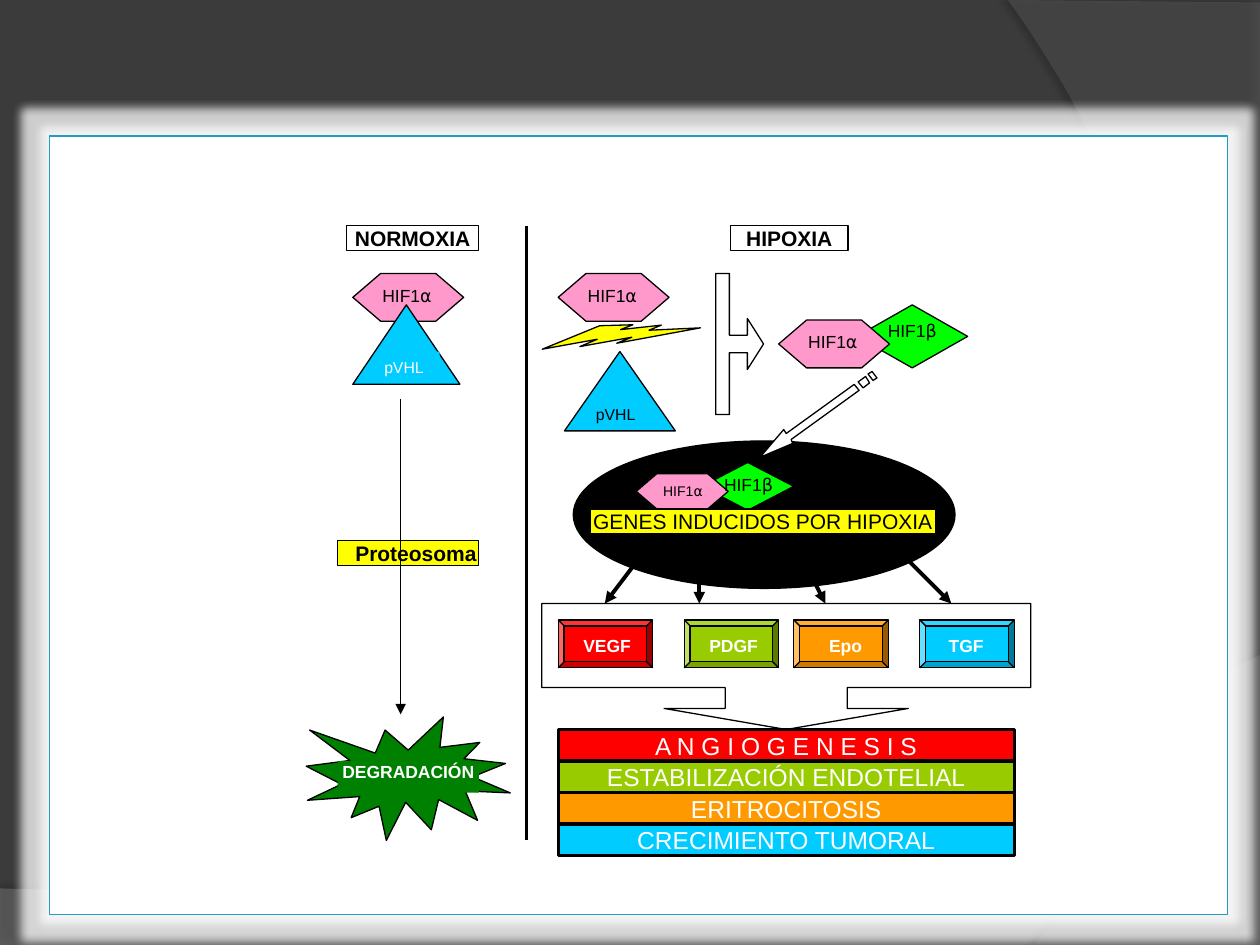
from lxml.etree import SubElement as Sub
from pptx import Presentation
from pptx.dml.color import RGBColor
from pptx.enum.shapes import MSO_CONNECTOR as Link, MSO_SHAPE as Form
from pptx.enum.text import MSO_ANCHOR as Anchor, PP_ALIGN as Align
from pptx.oxml import parse_xml as read
from pptx.oxml.ns import nsdecls, qn
from pptx.util import Cm, Pt

rgb = RGBColor.from_string
INCH = Cm(2.54)  # the layout grid is in eighths of an inch
BLACK, WHITE, YELLOW = "000000", "FFFFFF", "FFFF00"
PINK, BLUE, LIME, GREEN = "FF99CC", "00CCFF", "00FF00", "008000"
RED, OLIVE, AMBER = "FF0000", "99CC00", "FF9900"
HEX = [0.583]

deck = Presentation()
deck.slide_width, deck.slide_height = Cm(25.4), Cm(19.05)
slide = deck.slides.add_slide(deck.slide_layouts[6])
back = slide.background.fill
back.solid()
back.fore_color.rgb = rgb("3B3B3B")
shapes = slide.shapes


def put(form, box, fill=None, line=None, text="", size=10, color=BLACK, bold=False,
        align=Align.CENTER, pad=(0, 0, 0, 0), wrap=True, adj=(), width=0.75):
    """Add a shape, or a text box when form is None."""
    box = [int(v * INCH) for v in box]
    if form is None:
        shape = shapes.add_textbox(*box)
    else:
        shape = shapes.add_shape(form, *box)
        shape.shadow.inherit = False
        for i, v in enumerate(adj):
            shape.adjustments[i] = v
    if fill:
        shape.fill.solid()
        shape.fill.fore_color.rgb = rgb(fill)
    if line:
        shape.line.color.rgb = rgb(line)
        shape.line.width = Pt(width)
    else:
        shape.line.fill.background()
    if not text:
        return shape
    frame = shape.text_frame
    left, top, right, low = [int(v * INCH) for v in pad]
    form = {"margin_left": left, "margin_top": top, "margin_right": right,
            "margin_bottom": low, "word_wrap": wrap, "vertical_anchor": Anchor.TOP}
    for name, value in form.items():
        setattr(frame, name, value)
    para = frame.paragraphs[0]
    para.alignment = align
    # Greek letters take their own font
    stem = text.rstrip("αβ")
    for part, face in ((stem, "Arial"), (text[len(stem):], "DejaVu Sans")):
        if part:
            run = para.add_run()
            run.text = part
            for name, value in {"size": Pt(size), "name": face, "bold": bold}.items():
                setattr(run.font, name, value)
            run.font.color.rgb = rgb(color)
    return shape


def trace(paths, fill):
    """Add an outline of one or more closed paths."""
    paths = [[(round(x * 254), round(y * 254)) for x, y in p] for p in paths]
    pen = shapes.build_freeform(*paths[0][0], scale=Cm(0.01))
    for i, path in enumerate(paths):
        if i:
            pen.move_to(*path[0])
        pen.add_line_segments(path[1:], close=True)
    shape = pen.convert_to_shape()
    shape.shadow.inherit = False
    shape.fill.solid()
    shape.fill.fore_color.rgb = rgb(fill)
    return shape


# Background waves: corners, then a curve by four control points
waves = [
    ([(0, 7.05), (0, 7.5), (10, 7.5)],
     [(10, 5.2), (5.59, 7.29), (3.91, 7.19), (0, 7.05)], "7F7F7F", 45, 35, 3.5, 270),
    ([(10, 0.02), (10, 7.5)],
     [(8.21, 7.5), (9.35, 6.19), (10.18, 3), (8, 0)], "5E5E5E", 40, 45, 4, 180),
]
for ends, curve, fill, alpha, dark, dist, turn in waves:
    bend = []
    for i in range(41):
        t = i / 40
        parts = ((1 - t) ** 3, 3 * t * (1 - t) ** 2, 3 * t * t * (1 - t), t ** 3)
        bend.append([sum(w * p[k] for w, p in zip(parts, curve)) for k in (0, 1)])
    wave = trace([ends + bend], fill)
    wave.line.fill.background()
    tint = wave._element.spPr.find(qn("a:solidFill"))[0]
    Sub(tint, qn("a:alpha")).set("val", str(alpha * 1000))
    wave._element.spPr.find(qn("a:effectLst")).append(read(
        f'<a:outerShdw {nsdecls("a")} blurRad="{Pt(4)}" dist="{Pt(dist)}" dir="{turn * 60000}">'
        f'<a:srgbClr val="{BLACK}"><a:alpha val="{dark * 1000}"/></a:srgbClr></a:outerShdw>'))

# White panel with a soft glow
panel = put(Form.RECTANGLE, (0.39, 1.08, 9.35, 6.18), WHITE, "239BC2")
panel._element.spPr.find(qn("a:effectLst")).append(read(
    f'<a:glow {nsdecls("a")} rad="{Pt(10)}"><a:srgbClr val="{WHITE}">'
    '<a:alpha val="75000"/></a:srgbClr></a:glow>'))

# Headings and the proteasome label
for x, w, text in ((2.75, 1.05, "NORMOXIA"), (5.8, 0.93, "HIPOXIA")):
    put(Form.RECTANGLE, (x, 1.79, w, 0.2), WHITE, BLACK, text, 12, bold=True)
put(Form.RECTANGLE, (2.68, 4.29, 1.12, 0.2), YELLOW, BLACK, "Proteosoma", 12,
    bold=True, align=Align.LEFT, pad=(0.14, 0, 0, 0), wrap=False)

# Callout, nucleus and bolt
put(Form.DOWN_ARROW_CALLOUT, (4.3, 4.79, 3.88, 1), WHITE, BLACK,
    adj=(0.969, 0.969, 0.167, 0.667))
put(Form.OVAL, (4.55, 3.5, 3.03, 1.17), BLACK, BLACK)
put(Form.LIGHTNING_BOLT, (4.3, 2.54, 1.25, 0.25), YELLOW, BLACK).rotation = 343

# HIF1β diamonds, under the HIF1α hexagons
for box in ((6.8, 2.42, 0.88, 0.5), (5.57, 3.67, 0.73, 0.38)):
    put(Form.DIAMOND, box, LIME, BLACK)
for x, y in ((2.8, 2.17), (4.43, 2.17), (6.18, 2.54)):
    put(Form.HEXAGON, (x, y, 0.88, 0.38), PINK, BLACK, adj=HEX)
    put(None, (x + 0.12, y + 0.09, 0.62, 0.16), text="HIF1α")
put(Form.HEXAGON, (5.05, 3.76, 0.73, 0.28), PINK, BLACK, adj=HEX)
put(None, (5.16, 3.83, 0.52, 0.12), text="HIF1α", size=8)
for box in ((6.93, 2.54, 0.62, 0.16), (5.68, 3.76, 0.52, 0.28)):
    put(None, box, text="HIF1β")

# pVHL triangles
for x, y, w, color in ((2.8, 2.42, 0.85, WHITE), (4.48, 2.79, 0.88, BLACK)):
    put(Form.ISOSCELES_TRIANGLE, (x, y, w, 0.63), BLUE, BLACK)
    put(Form.RECTANGLE, (x + 0.25, y + 0.37, 0.44, 0.25), BLUE, None, "pVHL", 9, color,
        align=Align.LEFT, pad=(0, 0.05, 0, 0.05))

# Arrows into the dimer and the nucleus
put(Form.RIGHT_ARROW_CALLOUT, (5.68, 2.17, 0.38, 1.12), WHITE, BLACK,
    adj=(0.367, 0.533, 0.337, 0.287))
arrow = trace([
    [(6.29, 3.52), (6.28, 3.49), (6.82, 3.1), (6.78, 3.05), (6.24, 3.44), (6.22, 3.41),
     (6.03, 3.63)],
    [(6.9, 3.04), (6.87, 2.99), (6.81, 3.03), (6.85, 3.08)],
    [(6.96, 3), (6.92, 2.95), (6.89, 2.97), (6.93, 3.02)],
], WHITE)
arrow.line.color.rgb = rgb(BLACK)
arrow.line.width = Pt(0.75)
put(Form.RECTANGLE, (4.68, 4.04, 2.75, 0.2), YELLOW, BLACK,
    "GENES INDUCIDOS POR HIPOXIA", 12, width=1.5)

# Gene buttons: x, fill, label, label offset, label width, indent
genes = [(4.43, RED, "VEGF", 0.12, 0.46, 0.08), (5.43, OLIVE, "PDGF", 0.12, 0.47, 0.08),
         (6.3, AMBER, "Epo", 0.13, 0.42, 0.15), (7.3, BLUE, "TGF", 0.15, 0.36, 0.08)]
for x, fill, text, gap, w, pad in genes:
    put(Form.BEVEL, (x, 4.92, 0.75, 0.38), fill, BLACK, adj=[0.125])
    put(Form.RECTANGLE, (x + gap, 5.04, w, 0.12), fill, None, text, 10, WHITE, True,
        Align.LEFT, (pad, 0, 0, 0), False)

# Lines: from, to, width, arrowhead
lines = [(3.18, 3.17, 3.18, 5.67, 0.75, True), (4.18, 1.79, 4.18, 6.67, 1.5, False)]
lines += [(a, 4.29, b, 4.79, 2.25, True)
          for a, b in ((5.18, 4.8), (5.55, 5.55), (6.3, 6.55), (7.05, 7.55))]
for *ends, width, head in lines:
    link = shapes.add_connector(Link.STRAIGHT, *[int(v * INCH) for v in ends])
    link.line.color.rgb = rgb(BLACK)
    link.line.width = Pt(width)
    if head:
        Sub(link.line._get_or_add_ln(), qn("a:tailEnd")).set("type", "triangle")
    Sub(link._element.spPr, qn("a:effectLst"))

# Degradation burst
put(Form.EXPLOSION1, (2.43, 5.69, 1.62, 0.98), GREEN, BLACK)
put(Form.RECTANGLE, (2.68, 6.04, 1.12, 0.25), GREEN, None, "DEGRADACIÓN", 10, WHITE, True)

# Effects, one bar for each gene
bars = ["A N G I O G E N E S I S", "ESTABILIZACIÓN ENDOTELIAL", "ERITROCITOSIS",
        "CRECIMIENTO TUMORAL"]
for i, (text, gene) in enumerate(zip(bars, genes)):
    put(Form.RECTANGLE, (4.43, 5.79 + 0.25 * i, 3.62, 0.25), gene[1], BLACK, text, 14, WHITE,
        pad=(0.02, 0.01, 0.02, 0.01), width=1.75)

deck.save("out.pptx")
